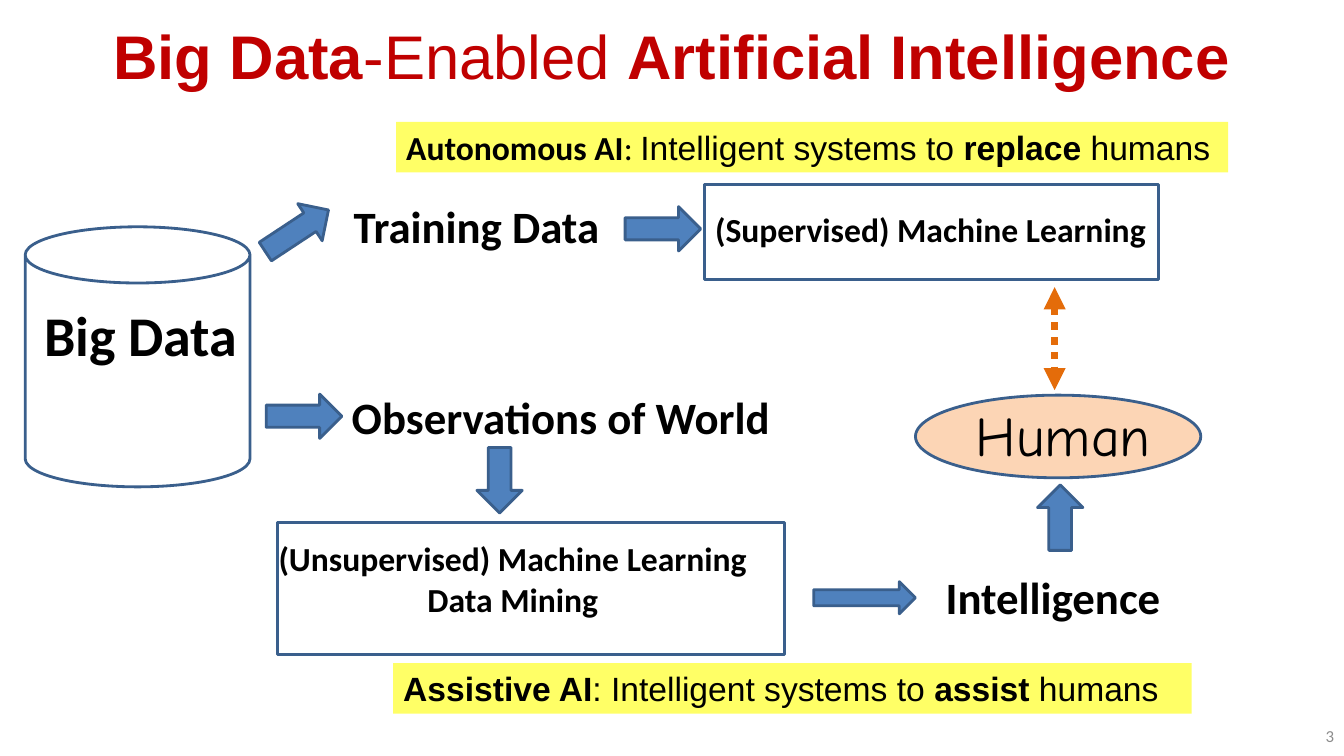
from lxml.etree import SubElement
from pptx import Presentation
from pptx.dml.color import RGBColor
from pptx.enum.dml import MSO_LINE
from pptx.enum.shapes import MSO_CONNECTOR, MSO_SHAPE
from pptx.enum.text import MSO_ANCHOR, MSO_AUTO_SIZE, PP_ALIGN
from pptx.oxml.ns import qn
from pptx.util import Inches, Pt

BLUE, EDGE, WHITE, BLACK = "4F81BD", "3A5F8C", "FFFFFF", "000000"
RED, YELLOW, PEACH, ORANGE, GRAY = "C00000", "FFFF66", "FCD5B5", "E46C0A", "8C8C8C"


def color(code):
    return RGBColor.from_string(code)


def style(font, size, name="Calibri", bold=True, code=BLACK):
    font.size, font.name, font.bold = Pt(size), name, bold
    font.color.rgb = color(code)


def shape(slide, kind, box, fill=WHITE, turn=0):
    item = slide.shapes.add_shape(kind, *map(Inches, box))
    item.shadow.inherit = False
    item.fill.solid()
    item.fill.fore_color.rgb = color(fill)
    item.line.color.rgb = color(EDGE)
    item.line.width = Pt(2)
    item.rotation = turn
    return item


def arrow(slide, x, y, wide=0.75, high=0.44, turn=0):
    shape(slide, MSO_SHAPE.RIGHT_ARROW, (x, y, wide, high), BLUE, turn)


def label(slide, box, lines, size, name="Calibri", bold=True, align=PP_ALIGN.LEFT):
    item = slide.shapes.add_textbox(*map(Inches, box))
    frame = item.text_frame
    frame.word_wrap = False
    frame.auto_size = MSO_AUTO_SIZE.SHAPE_TO_FIT_TEXT
    frame.text = lines
    for para in frame.paragraphs:
        para.alignment = align
        style(para.font, size, name, bold)


def banner(slide, box, parts):
    item = slide.shapes.add_textbox(*map(Inches, box))
    item.fill.solid()
    item.fill.fore_color.rgb = color(YELLOW)
    item.text_frame.word_wrap = True
    para = item.text_frame.paragraphs[0]
    for words, bold, name in parts:
        run = para.add_run()
        run.text = words
        style(run.font, 24, name, bold)


def heading(slide, box):
    title = slide.shapes.title
    title.left, title.top, title.width, title.height = map(Inches, box)
    frame = title.text_frame
    frame.auto_size = MSO_AUTO_SIZE.NONE
    frame.vertical_anchor = MSO_ANCHOR.MIDDLE
    para = frame.paragraphs[0]
    para.alignment = PP_ALIGN.CENTER
    parts = ("Big Data", True), ("-Enabled ", False), ("Artificial Intelligence", True)
    for words, bold in parts:
        run = para.add_run()
        run.text = words
        style(run.font, 44, "Arial", bold, RED)


def source(slide, x, y, wide, high):
    shape(slide, MSO_SHAPE.CAN, (x, y, wide, high))
    label(slide, (x + 0.09, y + 0.68, wide - 0.09, 0.77), "Big Data", 40)


def training(slide, x, y):
    arrow(slide, x, y + 0.24, turn=326.6)
    label(slide, (x + 0.84, y + 0.09, 2.76, 0.64), "Training Data", 32)
    arrow(slide, x + 3.63, y + 0.22)
    shape(slide, MSO_SHAPE.RECTANGLE, (x + 4.42, y, 4.5, 0.94))
    label(slide, (x + 4.04, y + 0.19, 5.24, 0.5),
          "(Supervised) Machine Learning", 24, align=PP_ALIGN.CENTER)


def mining(slide, x, y):
    arrow(slide, x, y + 0.09)
    label(slide, (x + 0.75, y, 4.39, 0.64), "Observations of World", 32)
    arrow(slide, x + 1.99, y + 0.72, 0.65, 0.45, 90)
    shape(slide, MSO_SHAPE.RECTANGLE, (x + 0.11, y + 1.36, 5.03, 1.31))
    label(slide, (x, y + 1.47, 4.89, 0.91),
          "(Unsupervised) Machine Learning\nData Mining", 24, align=PP_ALIGN.CENTER)
    arrow(slide, x + 5.43, y + 1.95, 1.01, 0.32)
    label(slide, (x + 6.64, y + 1.78, 2.35, 0.64), "Intelligence", 32)


def human(slide, x, y, wide, high):
    shape(slide, MSO_SHAPE.OVAL, (x, y, wide, high), PEACH)
    label(slide, (x + 0.5, y, 1.96, 0.77), "Human", 40, "Comic Neue", False)
    mid = x + 1.38
    link = slide.shapes.add_connector(
        MSO_CONNECTOR.STRAIGHT, *map(Inches, (mid, y - 1.07, mid, y - 0.05)))
    link.line.color.rgb = color(ORANGE)
    link.line.width = Pt(5.25)
    link.line.dash_style = MSO_LINE.ROUND_DOT
    line = link.line._get_or_add_ln()
    for end in ("a:headEnd", "a:tailEnd"):
        SubElement(line, qn(end), type="triangle")
    SubElement(link._element.spPr, qn("a:effectLst"))
    arrow(slide, x + 1.11, y + 0.99, 0.65, 0.45, 270)


def number(slide, box):
    item = slide.shapes.add_textbox(*map(Inches, box))
    frame = item.text_frame
    frame.word_wrap = True
    frame.vertical_anchor = MSO_ANCHOR.MIDDLE
    para = frame.paragraphs[0]
    para.text = "3"
    para.alignment = PP_ALIGN.RIGHT
    style(para.font, 12, bold=False, code=GRAY)


def main():
    deck = Presentation()
    deck.slide_width, deck.slide_height = Inches(13.33), Inches(7.5)
    slide = deck.slides.add_slide(deck.slide_layouts[5])
    heading(slide, (0, 0, 13.33, 1.08))
    source(slide, 0.25, 2.25, 2.23, 2.58)
    training(slide, 2.57, 1.83)
    mining(slide, 2.64, 3.82)
    human(slide, 9.08, 3.92, 2.83, 0.82)
    banner(slide, (3.93, 1.21, 8.25, 0.5), [
        ("Autonomous AI", True, "Calibri"), (": ", False, "Calibri"),
        ("Intelligent systems to ", False, "Arial"),
        ("replace", True, "Arial"), (" humans", False, "Arial")])
    banner(slide, (3.9, 6.58, 7.92, 0.5), [
        ("Assistive AI", True, "Arial"),
        (": Intelligent systems to ", False, "Arial"),
        ("assist ", True, "Arial"), ("humans", False, "Arial")])
    number(slide, (10.22, 7.1, 3.11, 0.4))
    deck.save("out.pptx")


if __name__ == "__main__":
    main()
